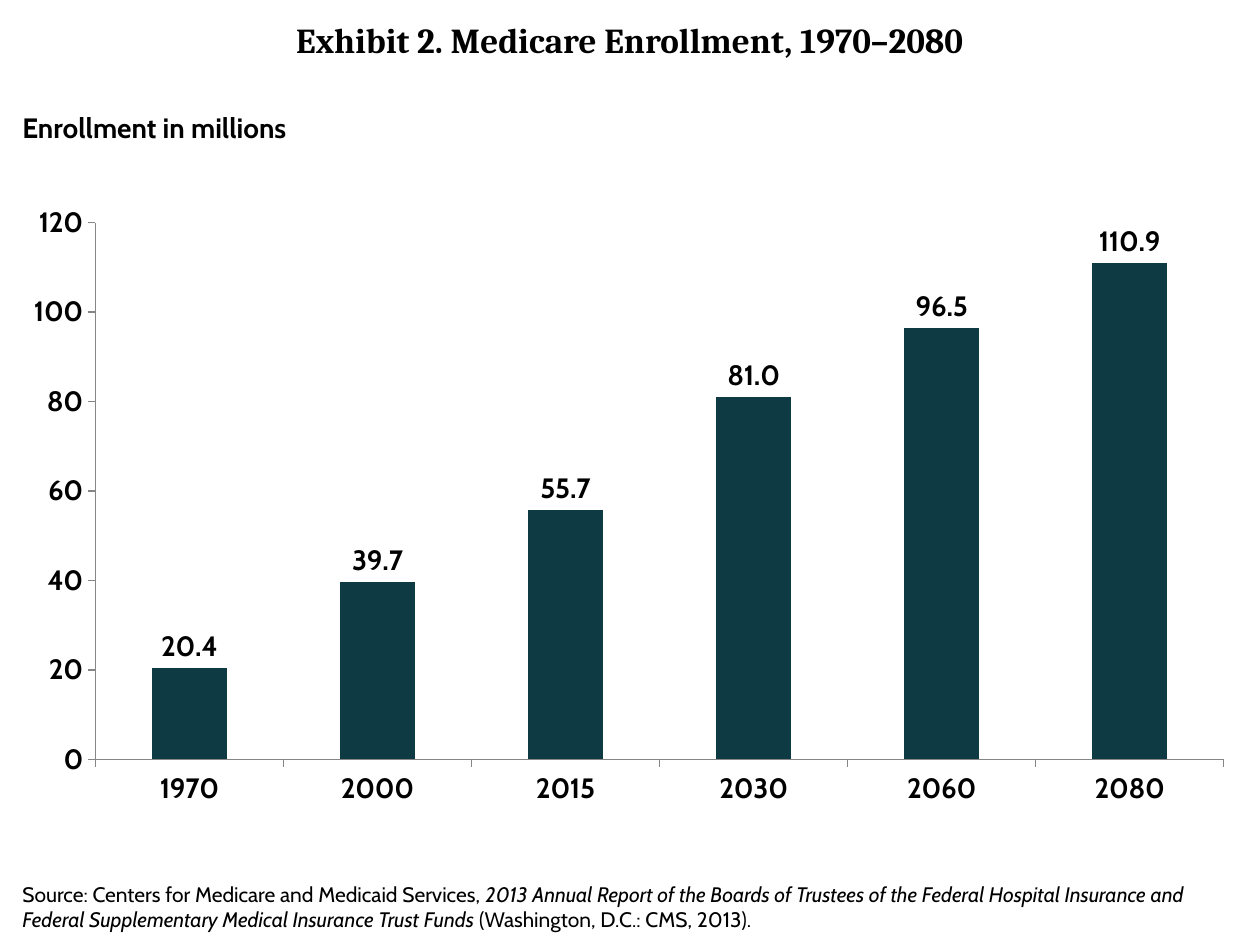
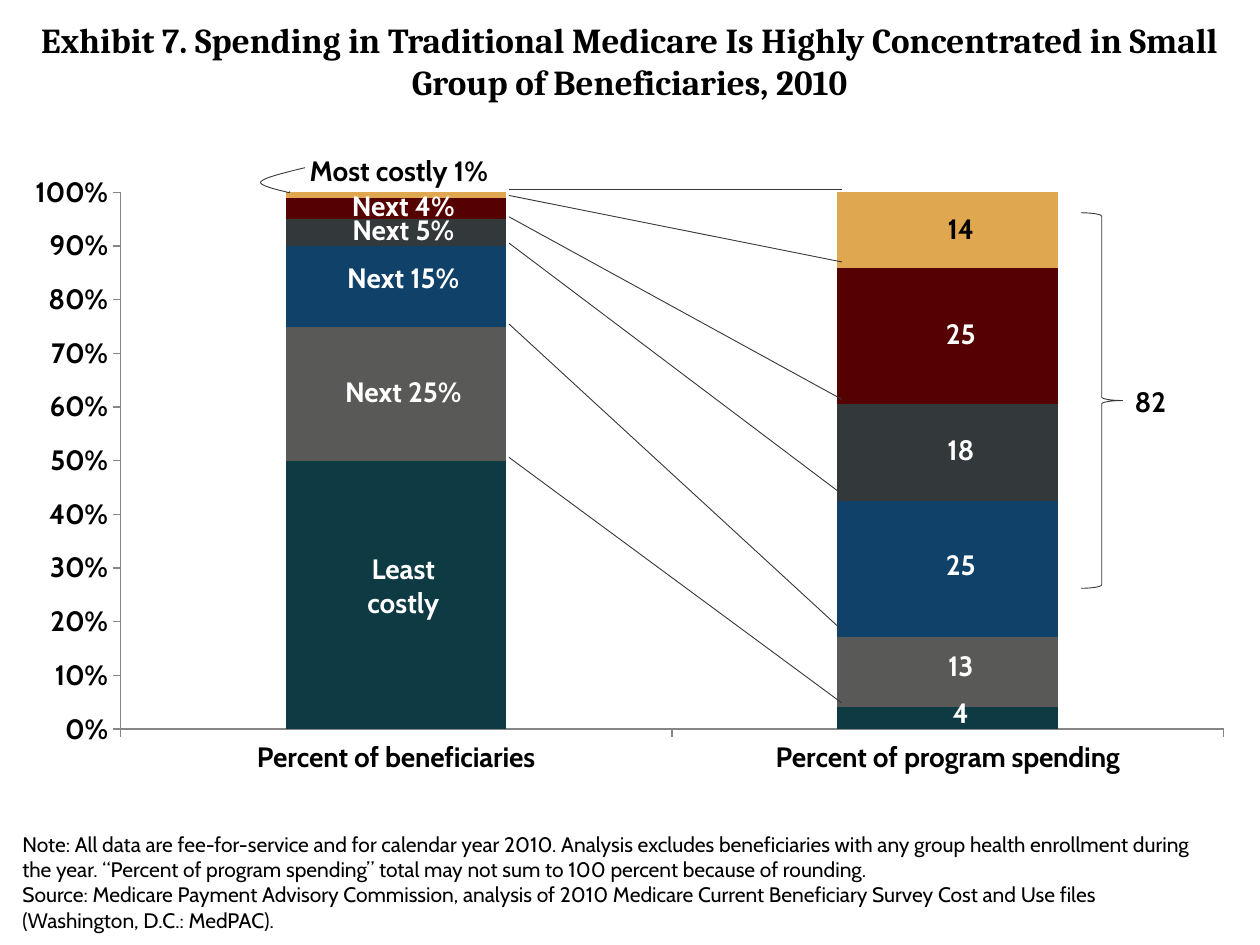
from lxml.etree import SubElement
from pptx import Presentation
from pptx.chart.data import CategoryChartData
from pptx.dml.color import RGBColor
from pptx.enum.chart import XL_CHART_TYPE, XL_LABEL_POSITION, XL_TICK_MARK
from pptx.enum.shapes import MSO_CONNECTOR, MSO_SHAPE
from pptx.enum.text import MSO_ANCHOR, MSO_AUTO_SIZE, PP_ALIGN
from pptx.oxml import parse_xml
from pptx.oxml.ns import qn
from pptx.util import Cm, Pt

# Shared colours and text formats
BLACK, WHITE = "000000", "FFFFFF"
TEAL, GREY, BLUE = "0D3A43", "595957", "104168"
CHARCOAL, MAROON, GOLD = "33383B", "560101", "DFA74F"
AXIS_GREY = "868686"

TITLE = {"name": "Cambria", "size": Pt(20), "bold": True}
LABEL = {"name": "Cabin", "size": Pt(16), "bold": True}
NOTE = {"name": "Cabin", "size": Pt(12), "bold": False}
CHART_TEXT = {"name": "Cabin", "size": Pt(18)}

# Shared chart geometry; plot values are fractions of the chart frame
CHART_LEFT, CHART_WIDTH, CHART_HEIGHT = 0.2, 24.97, 12.57
PLOT_TOP, PLOT_HEIGHT, PLOT_RIGHT = 0.046, 0.861, 0.98
LINE_HEIGHT = 0.94


def rgb(hex_colour):
    return RGBColor.from_string(hex_colour)


def apply_format(target, values):
    for attribute, value in values.items():
        setattr(target, attribute, value)


def style_font(font, values, colour=BLACK):
    apply_format(font, values)
    font.color.rgb = rgb(colour)


def style_line(line, colour=CHARCOAL, width=0.5):
    line.color.rgb = rgb(colour)
    line.width = Pt(width)


def add_text(slide, box, paragraphs, font, colour=BLACK,
             align=PP_ALIGN.LEFT, wrap=False):
    """Each paragraph is a list of (text, italic) runs; newlines become breaks."""
    frame = slide.shapes.add_textbox(*map(Cm, box)).text_frame
    apply_format(frame, {
        "word_wrap": wrap,
        "vertical_anchor": MSO_ANCHOR.TOP,
        "auto_size": MSO_AUTO_SIZE.NONE if wrap else MSO_AUTO_SIZE.SHAPE_TO_FIT_TEXT,
    })
    for index, runs in enumerate(paragraphs):
        paragraph = frame.add_paragraph() if index else frame.paragraphs[0]
        paragraph.alignment = align
        for text, italic in runs:
            for line_number, line in enumerate(text.split("\n")):
                if line_number:
                    paragraph.add_line_break()
                run = paragraph.add_run()
                run.text = line
                style_font(run.font, {**font, "italic": italic}, colour)


def add_title(slide, text):
    add_text(slide, (0, 0.25, 25.4, 2.03), [[(text, False)]], TITLE,
             align=PP_ALIGN.CENTER, wrap=True)


def add_label(slide, text, centre, top, width, colour=WHITE):
    height = LINE_HEIGHT if "\n" not in text else 1.63
    add_text(slide, (centre - width / 2, top, width, height),
             [[(text, False)]], LABEL, colour, PP_ALIGN.CENTER)


def set_plot_area(chart, left):
    plot_area = chart._chartSpace.find(".//" + qn("c:plotArea"))
    for layout in plot_area.findall(qn("c:layout")):
        plot_area.remove(layout)
    entries = {"layoutTarget": "inner", "xMode": "edge", "yMode": "edge",
               "x": left, "y": PLOT_TOP,
               "w": round(PLOT_RIGHT - left, 3), "h": PLOT_HEIGHT}
    items = "".join(f'<c:{tag} val="{value}"/>' for tag, value in entries.items())
    plot_area.insert(0, parse_xml(
        '<c:layout xmlns:c="http://schemas.openxmlformats.org/drawingml/2006/chart">'
        f"<c:manualLayout>{items}</c:manualLayout></c:layout>"))


def add_column_chart(slide, kind, top, plot_left, categories, series,
                     number_format, axis_values):
    """Each series is a (values, colour) pair."""
    data = CategoryChartData()
    data.categories = categories
    for number, (values, _) in enumerate(series, 1):
        data.add_series(f"Series {number}", values)
    chart = slide.shapes.add_chart(
        kind, Cm(CHART_LEFT), Cm(top), Cm(CHART_WIDTH), Cm(CHART_HEIGHT), data).chart
    apply_format(chart, {"has_legend": False, "has_title": False})
    style_font(chart.font, CHART_TEXT)
    set_plot_area(chart, plot_left)

    plot = chart.plots[0]
    apply_format(plot, {"gap_width": 150, "vary_by_categories": False})
    for column, (_, colour) in zip(plot.series, series):
        column.format.fill.solid()
        column.format.fill.fore_color.rgb = rgb(colour)

    for axis in (chart.category_axis, chart.value_axis):
        apply_format(axis, {"has_major_gridlines": False,
                            "major_tick_mark": XL_TICK_MARK.OUTSIDE,
                            "minor_tick_mark": XL_TICK_MARK.NONE})
        style_font(axis.tick_labels.font, LABEL)
        style_line(axis.format.line, AXIS_GREY, 0.75)
    apply_format(chart.value_axis, axis_values)
    apply_format(chart.value_axis.tick_labels,
                 {"number_format": number_format, "number_format_is_linked": False})
    return plot


def add_value_labels(plot):
    plot.has_data_labels = True
    apply_format(plot.data_labels, {
        "show_value": True, "number_format": "#,##0.0",
        "number_format_is_linked": False,
        "position": XL_LABEL_POSITION.OUTSIDE_END})
    style_font(plot.data_labels.font, LABEL)


def add_link(slide, start, end):
    link = slide.shapes.add_connector(MSO_CONNECTOR.STRAIGHT, *map(Cm, start + end))
    style_line(link.line)
    SubElement(link._element.spPr, qn("a:effectLst"))


def style_outline(shape):
    shape.shadow.inherit = False
    shape.fill.background()
    style_line(shape.line)


def add_curve(slide, start, segments, steps=8):
    """Draw cubic curves, each given by two control points and an end point."""
    points, origin = [], start
    for first, second, end in segments:
        for step in range(1, steps + 1):
            t = step / steps
            u = 1 - t
            points.append(tuple(
                Cm(u**3 * a + 3 * u * u * t * b + 3 * u * t * t * c + t**3 * d)
                for a, b, c, d in zip(origin, first, second, end)))
        origin = end
    builder = slide.shapes.build_freeform(Cm(start[0]), Cm(start[1]))
    builder.add_line_segments(points, close=False)
    style_outline(builder.convert_to_shape())


def build_enrollment(slide):
    add_title(slide, "Exhibit 2. Medicare Enrollment, 1970–2080")
    plot = add_column_chart(
        slide, XL_CHART_TYPE.COLUMN_CLUSTERED, 3.91, 0.069,
        ["1970", "2000", "2015", "2030", "2060", "2080"],
        [((20.4, 39.7, 55.7, 81, 96.5, 110.9), TEAL)], "General",
        {"minimum_scale": 0, "maximum_scale": 120, "major_unit": 20})
    add_value_labels(plot)
    add_text(slide, (0.2, 2.11, 5.92, LINE_HEIGHT),
             [[("Enrollment in millions", False)]], LABEL)
    add_text(slide, (0.2, 17.65, 24.92, 1.27), [[
        ("Source: Centers for Medicare and Medicaid Services, ", False),
        ("2013 Annual Report of the Boards of Trustees of the Federal Hospital "
         "Insurance and\nFederal Supplementary Medical Insurance Trust Funds", True),
        (" (Washington, D.C.: CMS, 2013).", False)]], NOTE)


def build_spending(slide):
    add_title(slide, "Exhibit 7. Spending in Traditional Medicare Is Highly "
                     "Concentrated in Small Group of Beneficiaries, 2010")
    plot = add_column_chart(
        slide, XL_CHART_TYPE.COLUMN_STACKED_100, 3.3, 0.089,
        ["Percent of beneficiaries", "Percent of program spending"],
        [((50, 4), TEAL), ((25, 13), GREY), ((15, 25), BLUE),
         ((5, 18), CHARCOAL), ((4, 25), MAROON), ((1, 14), GOLD)], "0%", {})
    plot.overlap = 100
    add_text(slide, (0.2, 16.64, 24.43, 2.31), [
        [("Note: All data are fee-for-service and for calendar year 2010. Analysis "
          "excludes beneficiaries with any group health enrollment during\n"
          "the year. “Percent of program spending” total may not sum to 100 percent "
          "because of rounding.", False)],
        [("Source: Medicare Payment Advisory Commission, analysis of 2010 Medicare "
          "Current Beneficiary Survey Cost and Use files\n"
          "(Washington, D.C.: MedPAC).", False)]], NOTE)

    # Links between matching group boundaries
    for left_y, right_y in [(3.81, 3.81), (3.94, 5.28), (4.37, 8.05),
                            (4.9, 9.96), (6.53, 12.7), (9.22, 14.17)]:
        add_link(slide, (10.26, left_y), (16.97, right_y))

    # Spending shares
    for share, top, colour in [("14", 4.14, BLACK), ("25", 6.25, WHITE),
                               ("18", 8.59, WHITE), ("25", 10.92, WHITE),
                               ("13", 12.95, WHITE), ("4", 13.89, WHITE)]:
        add_label(slide, share, 19.37, top, 1.1 if len(share) == 2 else 0.84, colour)

    # Beneficiary groups
    add_label(slide, "Most costly 1%", 8.04, 2.97, 4.14, BLACK)
    for group, top, width in [("Next 4%", 3.68, 2.62), ("Next 5%", 4.17, 2.59),
                              ("Next 15%", 5.13, 2.9), ("Next 25%", 7.42, 2.9),
                              ("Least\ncostly", 11, 1.98)]:
        add_label(slide, group, 8.13, top, width)

    # Pointer to the top group, and the bracketed total
    add_curve(slide, (6.15, 3.38), [
        ((5.74, 3.48), (5.33, 3.58), (5.26, 3.66)),
        ((5.18, 3.73), (5.64, 3.84), (5.74, 3.86)),
        ((5.84, 3.89), (5.84, 3.89), (5.84, 3.86))])
    style_outline(slide.shapes.add_shape(
        MSO_SHAPE.RIGHT_BRACE, Cm(21.79), Cm(4.29), Cm(0.84), Cm(7.57)))
    add_label(slide, "82", 23.19, 7.62, 1.17, BLACK)


def main():
    deck = Presentation()
    apply_format(deck, {"slide_width": Cm(25.4), "slide_height": Cm(19.05)})
    blank = deck.slide_layouts[6]
    for build in (build_enrollment, build_spending):
        build(deck.slides.add_slide(blank))
    deck.save("out.pptx")


if __name__ == "__main__":
    main()
